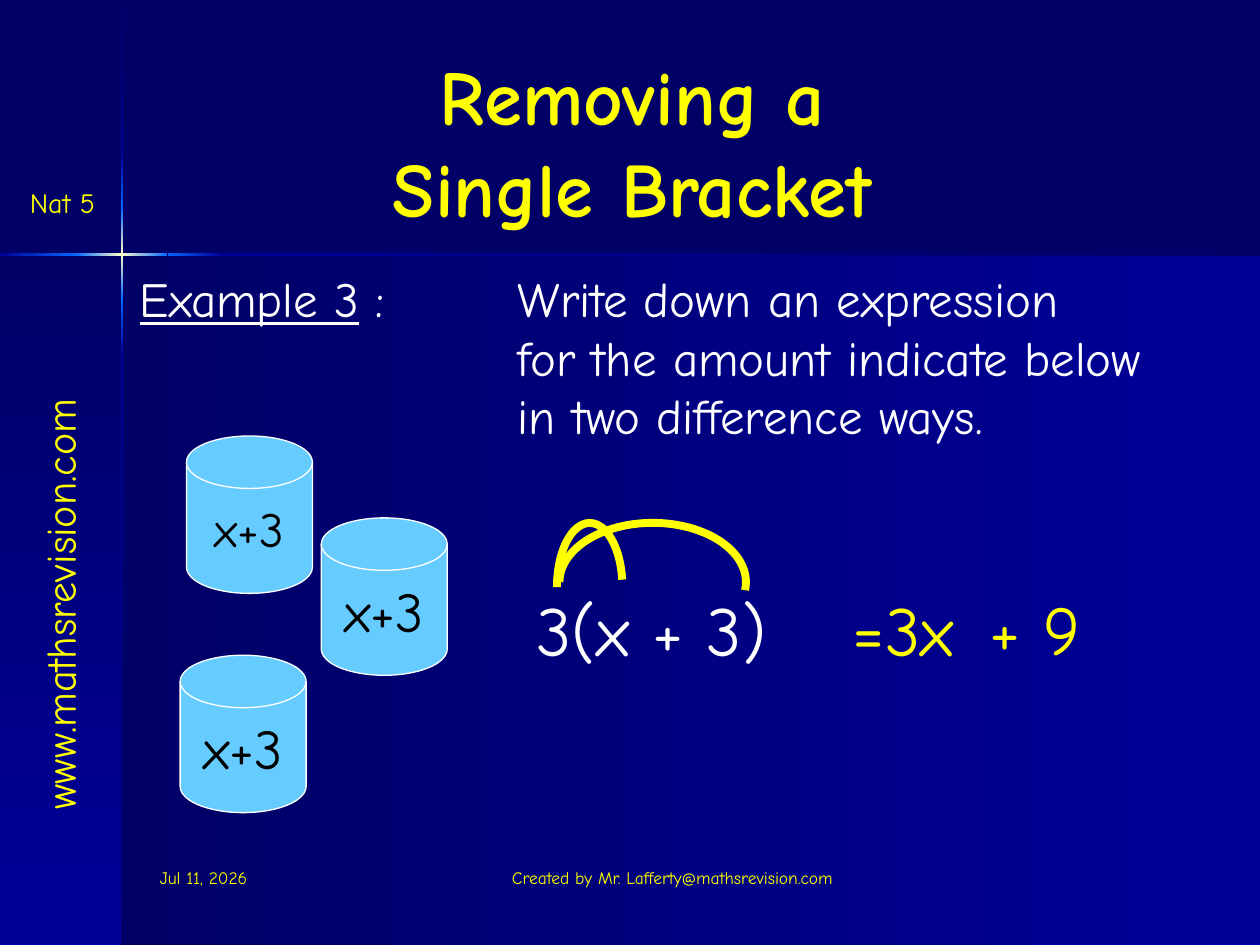
from pptx import Presentation
from pptx import util as u
from pptx.dml.color import RGBColor
from pptx.enum import shapes, text
from pptx.oxml import parse_xml
from pptx.oxml.ns import nsdecls

FONT = "Comic Neue"
COLORS = {
    "navy": "000066", "blue": "000099", "bright": "0066FF", "glow": "FFFFCC",
    "yellow": "FFFF00", "white": "FFFFFF", "black": "000000", "can": "66CCFF",
}
ACROSS, DOWN = 0, 90
CENTER = text.PP_ALIGN.CENTER
LEFT = text.PP_ALIGN.LEFT


def rgb(name):
    return RGBColor.from_string(COLORS[name])


def add_preset(slide, preset, box):
    shape = slide.shapes.add_shape(preset, *[u.Inches(value) for value in box])
    shape.shadow.inherit = False
    return shape


def add_gradient(slide, box, stops, angle):
    """Borderless rectangle with evenly spaced gradient stops."""
    shape = add_preset(slide, shapes.MSO_SHAPE.RECTANGLE, box)
    shape.line.fill.background()
    step = 100000 // (len(stops) - 1)
    stop_xml = "".join(
        f'<a:gs pos="{index * step}"><a:srgbClr val="{COLORS[name]}"/></a:gs>'
        for index, name in enumerate(stops))
    gradient = parse_xml(
        f'<a:gradFill {nsdecls("a")} rotWithShape="1"><a:gsLst>{stop_xml}</a:gsLst>'
        f'<a:lin ang="{angle * 60000}" scaled="0"/></a:gradFill>')
    shape._element.spPr.prstGeom.addnext(gradient)


def write_lines(shape, lines, size, color, align=LEFT, bold=False, wrap=False,
                anchor=text.MSO_ANCHOR.TOP, tabs=()):
    """Each line is a list of (wording, underlined) runs or a plain string."""
    frame = shape.text_frame
    frame.word_wrap = wrap
    frame.vertical_anchor = anchor
    font_format = {"name": FONT, "size": u.Pt(size), "bold": bold}
    for index, line in enumerate(lines):
        paragraph = frame.paragraphs[0] if index == 0 else frame.add_paragraph()
        paragraph.alignment = align
        if tabs:
            stops = "".join(f'<a:tab pos="{u.Inches(tab)}" algn="l"/>' for tab in tabs)
            paragraph._p.get_or_add_pPr().append(
                parse_xml(f'<a:tabLst {nsdecls("a")}>{stops}</a:tabLst>'))
        for wording, underlined in [(line, False)] if isinstance(line, str) else line:
            run = paragraph.add_run()
            run.text = wording
            for key, value in {**font_format, "underline": underlined}.items():
                setattr(run.font, key, value)
            run.font.color.rgb = rgb(color)


def add_text(slide, box, lines, size, color="yellow", rotation=0, **options):
    shape = slide.shapes.add_textbox(*[u.Inches(value) for value in box])
    shape.rotation = rotation
    write_lines(shape, lines, size, color, **options)


def add_can(slide, left, top, size):
    shape = add_preset(slide, shapes.MSO_SHAPE.FLOWCHART_MAGNETIC_DISK,
                       (left, top, 1, 1.25))
    shape.fill.solid()
    shape.fill.fore_color.rgb = rgb("can")
    shape.line.color.rgb = rgb("white")
    shape.line.width = u.Pt(0.75)
    write_lines(shape, ["x+3"], size, "black", align=CENTER,
                anchor=text.MSO_ANCHOR.MIDDLE)


def add_arc(slide, box, end_degrees):
    """Arc from the left end of the ellipse, over the top."""
    shape = add_preset(slide, shapes.MSO_SHAPE.ARC, box)
    for index, degrees in enumerate((180, end_degrees)):
        shape.adjustments[index] = degrees * 0.6
    shape.fill.background()
    shape.line.color.rgb = rgb("yellow")
    shape.line.width = u.Pt(4.5)


def add_backdrop(slide):
    slide.background.fill.solid()
    slide.background.fill.fore_color.rgb = rgb("navy")

    # Panels
    add_gradient(slide, (0.97, 2.02, 9.03, 5.48), ("navy", "blue"), ACROSS)
    add_gradient(slide, (0, 2.02, 0.97, 5.48), ("navy", "blue"), DOWN)

    # Glowing cross: start, end and colours of each segment
    glow = ("bright", "glow", "bright")
    vertical = [
        (0.01, 1.21, ("navy", "blue")), (2.82, 7.5, ("blue", "navy")),
        (2.38, 2.82, ("bright", "blue")), (1.21, 1.65, ("blue", "bright")),
        (1.65, 2.38, glow),
    ]
    horizontal = [
        (1.77, 10, ("blue", "navy")), (0, 0.61, ("blue", "bright")),
        (1.33, 1.77, ("bright", "blue")), (0.6, 1.33, glow),
    ]
    for start, end, stops in vertical:
        add_gradient(slide, (0.96, start, 0.02, end - start), stops, DOWN)
    for start, end, stops in horizontal:
        add_gradient(slide, (start, 2.01, end - start, 0.02), stops, ACROSS)


def main():
    presentation = Presentation()
    presentation.slide_width = u.Inches(10)
    presentation.slide_height = u.Inches(7.5)
    slide = presentation.slides.add_slide(presentation.slide_layouts[6])
    add_backdrop(slide)

    # Side labels and title
    add_text(slide, (-1.43, 4.37, 3.8, 0.5), ["www.mathsrevision.com"], 24, rotation=270)
    add_text(slide, (0.1, 1.42, 0.79, 0.37), ["Nat 5"], 16, align=CENTER)
    add_text(slide, (2.02, 0.33, 6, 1.57), ["Removing a", "Single Bracket"], 44,
             align=CENTER, bold=True, wrap=True, anchor=text.MSO_ANCHOR.BOTTOM)

    # Question
    add_text(slide, (1.01, 2.08, 8.63, 1.5), [
        [("Example 3", True), (" : \tWrite down an expression", False)],
        "\t\t\tfor the amount indicate below",
        "\t\t\tin two difference ways.",
    ], 28, "white", wrap=True, tabs=(1, 2, 3))

    # Expansion of the bracket
    add_text(slide, (4.16, 4.61, 2.21, 0.77), ["3(x + 3)"], 40, "white")
    add_text(slide, (6.67, 4.61, 1.15, 0.77), ["=3x"], 40)
    add_text(slide, (7.57, 4.6, 1.13, 0.77), [" + 9"], 40)
    add_arc(slide, (4.42, 4.15, 0.52, 1.02), 347)
    add_arc(slide, (4.44, 4.15, 1.48, 0.94), 5)

    # Cans
    for left, top, size in [(1.48, 3.46, 28), (2.55, 4.11, 32), (1.43, 5.2, 32)]:
        add_can(slide, left, top, size)

    # Footer
    add_text(slide, (1.17, 6.83, 2.08, 0.5), ["Jul 11, 2026"], 10, wrap=True)
    add_text(slide, (3.75, 6.83, 3.17, 0.5),
             ["Created by Mr. Lafferty@mathsrevision.com"], 10, align=CENTER, wrap=True)

    presentation.save("out.pptx")


if __name__ == "__main__":
    main()
